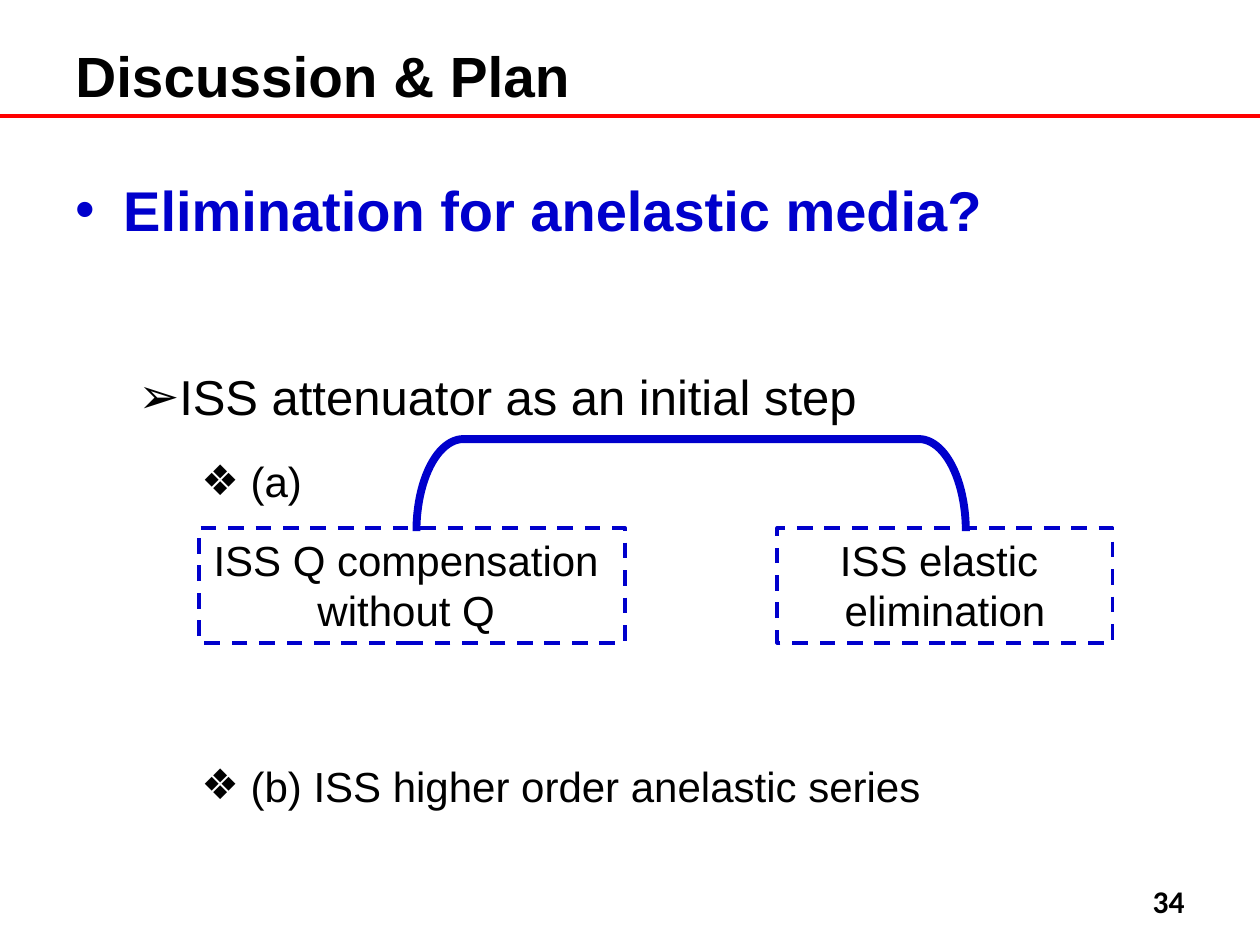
import dataclasses

import lxml.etree
import pptx
import pptx.dml.color
import pptx.enum.dml
import pptx.enum.shapes
import pptx.enum.text
import pptx.oxml.ns
import pptx.util

Inches = pptx.util.Inches
Pt = pptx.util.Pt
Align = pptx.enum.text.PP_ALIGN
Anchor = pptx.enum.text.MSO_ANCHOR
Shape = pptx.enum.shapes.MSO_SHAPE
qn = pptx.oxml.ns.qn


@dataclasses.dataclass(frozen=True)
class Theme:
    black: str = "000000"
    blue: str = "0000CC"
    red: str = "FF0000"
    font: str = "Arial"
    number_font: str = "Calibri"
    title: float = 32.4
    heading: float = 32
    point: float = 28
    detail: float = 24
    number: float = 18
    thin: float = 2.25
    thick: float = 4.5
    spacing: float = 1.5


class SlideBuilder:
    def __init__(self, page, theme):
        self.page = page
        self.theme = theme

    def add_span(self, para, text, size, color=None, bold=False, font=None):
        span = para.add_run()
        span.text = text
        span.font.name = font or self.theme.font
        span.font.size = Pt(size)
        span.font.bold = bold
        span.font.color.rgb = pptx.dml.color.RGBColor.from_string(color or self.theme.black)

    def text_box(self, left, top, width, height, anchor=Anchor.TOP):
        box = self.page.shapes.add_textbox(Inches(left), Inches(top), Inches(width), Inches(height))
        box.text_frame.word_wrap = True
        box.text_frame.vertical_anchor = anchor
        return box.text_frame

    def bullet(self, para, symbol, margin, hanging):
        """Hang the symbol to the left of the paragraph's margin."""
        properties = para._p.get_or_add_pPr()
        properties.set("marL", str(Inches(margin)))
        properties.set("indent", str(-Inches(hanging)))
        lxml.etree.SubElement(properties, qn("a:buFont")).set("typeface", self.theme.font)
        lxml.etree.SubElement(properties, qn("a:buChar")).set("char", symbol)

    def stroke(self, line, color, width):
        line.color.rgb = pptx.dml.color.RGBColor.from_string(color)
        line.width = Pt(width)

    def rule(self, left, right, height):
        line = self.page.shapes.add_connector(
            pptx.enum.shapes.MSO_CONNECTOR.STRAIGHT,
            Inches(left), Inches(height), Inches(right), Inches(height))
        self.stroke(line.line, self.theme.red, self.theme.thin)
        lxml.etree.SubElement(line._element.spPr, qn("a:effectLst"))

    def outline(self, kind, left, top, width, height, weight):
        """Add an unfilled blue shape."""
        shape = self.page.shapes.add_shape(
            kind, Inches(left), Inches(top), Inches(width), Inches(height))
        shape.shadow.inherit = False
        shape.fill.background()
        self.stroke(shape.line, self.theme.blue, weight)
        return shape

    def dashed_box(self, left, width, lines, wrap):
        box = self.outline(Shape.RECTANGLE, left, 4.19, width, 0.91, self.theme.thin)
        box.line.dash_style = pptx.enum.dml.MSO_LINE.DASH
        frame = box.text_frame
        frame.word_wrap = wrap
        frame.vertical_anchor = Anchor.TOP
        for index, text in enumerate(lines):
            para = frame.add_paragraph() if index else frame.paragraphs[0]
            para.alignment = Align.CENTER
            self.add_span(para, text, self.theme.detail)

    def bracket(self, left, top, width, height):
        shape = self.outline(Shape.LEFT_BRACKET, left, top, width, height, self.theme.thick)
        shape.rotation = 90
        shape.adjustments[0] = 0.51

    def title(self, text):
        para = self.text_box(0.5, 0, 9, 0.92, Anchor.MIDDLE).paragraphs[0]
        para.line_spacing = self.theme.spacing
        self.add_span(para, text, self.theme.title, bold=True)

    def outline_list(self, items):
        """Each item: text, level, space before in points."""
        theme = self.theme
        levels = [
            ("•", 0.38, 0.38, theme.heading, theme.blue, True),
            ("➢", 0.81, 0.31, theme.point, theme.black, False),
            ("❖", 1.25, 0.25, theme.detail, theme.black, False),
        ]
        frame = self.text_box(0.5, 1.08, 9, 5.62)
        for index, (text, level, before) in enumerate(items):
            symbol, margin, hanging, size, color, bold = levels[level]
            para = frame.add_paragraph() if index else frame.paragraphs[0]
            para.level = level
            para.line_spacing = theme.spacing
            para.space_before = Pt(before)
            self.bullet(para, symbol, margin, hanging)
            self.add_span(para, text, size, color, bold)

    def page_number(self, text):
        para = self.text_box(7.17, 6.95, 2.33, 0.4, Anchor.MIDDLE).paragraphs[0]
        para.alignment = Align.RIGHT
        self.add_span(para, text, self.theme.number, bold=True, font=self.theme.number_font)


def main():
    deck = pptx.Presentation()
    deck.slide_width, deck.slide_height = Inches(10), Inches(7.5)
    builder = SlideBuilder(deck.slides.add_slide(deck.slide_layouts[6]), Theme())
    builder.rule(0, 10, 0.92)
    builder.title("Discussion & Plan")
    builder.outline_list([
        ("Elimination for anelastic media?", 0, 3),
        ("ISS attenuator as an initial step", 1, 54),
        (" (a)", 2, 2.5),
        (" (b) ISS higher order anelastic series", 2, 131),
    ])
    builder.page_number("34")
    builder.dashed_box(1.58, 3.38, ["ISS Q compensation ", "without Q "], wrap=False)
    builder.dashed_box(6.17, 2.66, ["ISS elastic ", "elimination"], wrap=True)
    builder.bracket(5.12, 1.67, 0.73, 4.36)
    deck.save("out.pptx")


if __name__ == "__main__":
    main()
